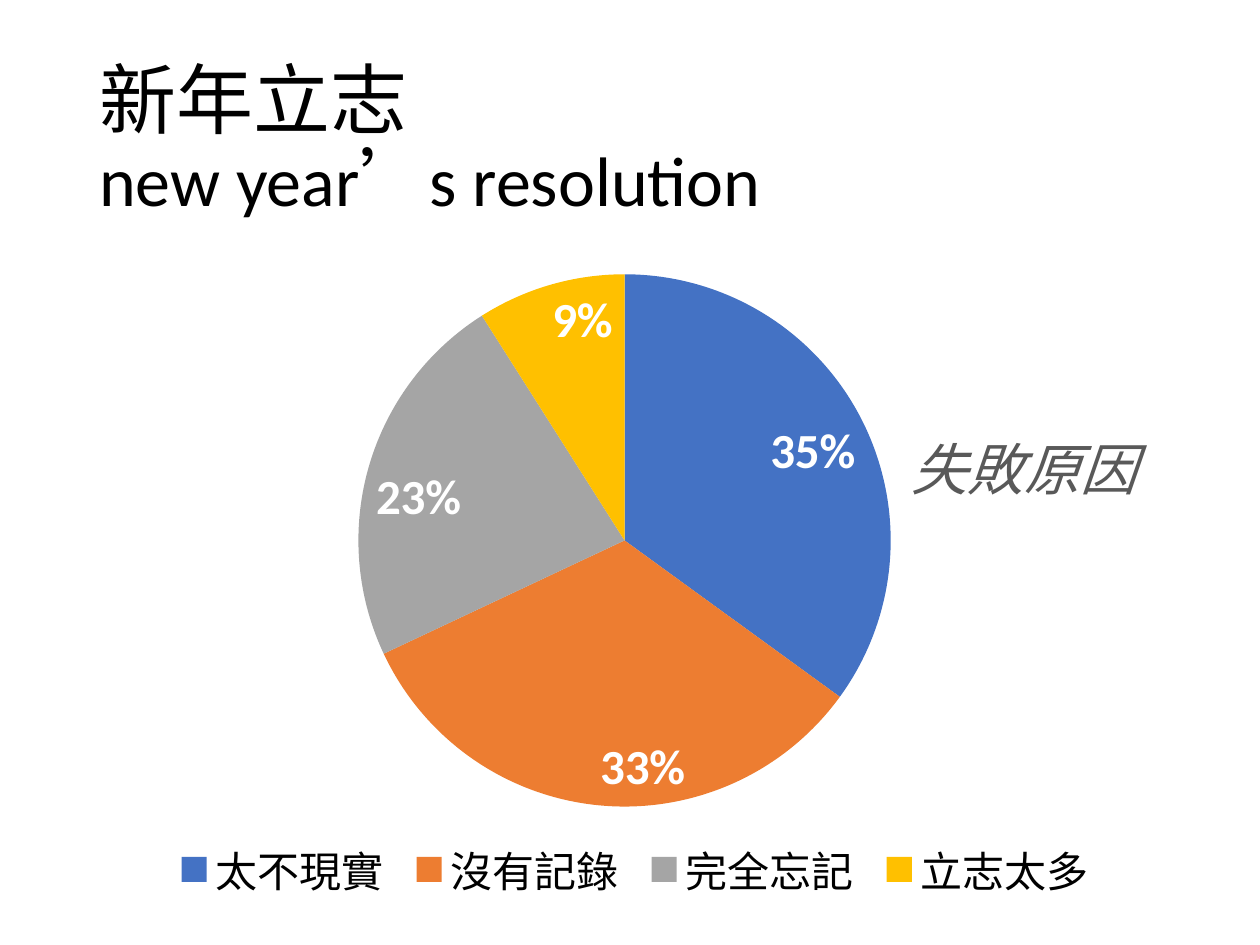
"""Build a slide with a pie chart of why New Year's resolutions fail."""
from typing import NamedTuple

from lxml.etree import SubElement
from pptx import Presentation
from pptx.chart.data import CategoryChartData
from pptx.dml.color import RGBColor
from pptx.enum.chart import XL_CHART_TYPE, XL_LABEL_POSITION, XL_LEGEND_POSITION
from pptx.enum.text import MSO_ANCHOR
from pptx.oxml import parse_xml
from pptx.oxml.ns import nsdecls, qn
from pptx.util import Cm, Pt

LATIN = "Calibri"
CJK = "Noto Sans CJK SC"


class Slice(NamedTuple):
    label: str
    percent: int
    color: str


class TextPiece(NamedTuple):
    text: str
    size: int
    font: str


SLICES = [
    Slice("太不現實", 35, "4472C4"),
    Slice("沒有記錄", 33, "ED7D31"),
    Slice("完全忘記", 23, "A5A5A5"),
    Slice("立志太多", 9, "FFC000"),
]
HEADING = [
    [TextPiece("新年立志", 44, CJK)],
    [
        TextPiece("new year", 40, LATIN),
        TextPiece("’", 40, CJK),
        TextPiece("s resolution", 40, LATIN),
    ],
]


def rgb(color: str) -> RGBColor:
    return RGBColor.from_string(color)


def style_font(font, size: int, color: str, name: str = LATIN) -> None:
    font.size = Pt(size)
    font.name = name
    font.color.rgb = rgb(color)
    SubElement(font._rPr, qn("a:ea")).set("typeface", CJK)


def set_layout(element, x: float, y: float, w: float = 0, h: float = 0,
               inner: bool = False) -> None:
    target = '<c:layoutTarget val="inner"/>' if inner else ""
    modes = '<c:xMode val="edge"/><c:yMode val="edge"/>'
    sizes = f'<c:w val="{w}"/><c:h val="{h}"/>' if w else ""
    layout = parse_xml(
        f'<c:layout {nsdecls("c")}><c:manualLayout>{target}{modes}'
        f'<c:x val="{x}"/><c:y val="{y}"/>{sizes}</c:manualLayout></c:layout>'
    )
    for old in element.findall(qn("c:layout")):
        element.remove(old)
    before = {qn("c:tx"), qn("c:legendPos"), qn("c:legendEntry")}
    element.insert(sum(child.tag in before for child in element), layout)


def add_heading(s) -> None:
    tf = s.shapes.add_textbox(Cm(1.75), Cm(1.02), Cm(21.9), Cm(3.68)).text_frame
    tf.word_wrap = True
    tf.vertical_anchor = MSO_ANCHOR.MIDDLE
    p = tf.paragraphs[0]
    p.line_spacing = 0.9
    for i, line in enumerate(HEADING):
        if i:
            p.add_line_break()
        for piece in line:
            r = p.add_run()
            r.text = piece.text
            style_font(r.font, piece.size, "000000", piece.font)


def add_pie(s) -> None:
    data = CategoryChartData(number_format="General")
    data.categories = [item.label for item in SLICES]
    data.add_series("Series 1", [item.percent for item in SLICES])
    chart = s.shapes.add_chart(
        XL_CHART_TYPE.PIE, Cm(1.75), Cm(3.81), Cm(21.9), Cm(15.24), data
    ).chart
    style_font(chart.font, 10, "000000")

    chart.has_title = True
    title = chart.chart_title
    title.include_in_layout = False
    p = title.text_frame.paragraphs[0]
    p.text = "失敗原因"
    style_font(p.font, 32, "595959")
    p.font.bold = False
    p.font.italic = True
    set_layout(title._element, 0.75, 0.29)

    chart.has_legend = True
    legend = chart.legend
    legend.position = XL_LEGEND_POSITION.TOP
    legend.include_in_layout = False
    style_font(legend.font, 24, "000000")
    set_layout(legend._element, 0.07, 0.85, 0.87, 0.1)

    plot = chart.plots[0]
    plot.vary_by_categories = True
    set_layout(chart._chartSpace.chart.plotArea, 0.25, 0.11, 0.49, 0.71, inner=True)
    series = plot.series[0]
    for i, item in enumerate(SLICES):
        fill = series.points[i].format.fill
        fill.solid()
        fill.fore_color.rgb = rgb(item.color)

    labels = series.data_labels
    labels.show_percentage = True
    labels.show_value = False
    labels.number_format = "0%"
    labels.number_format_is_linked = False
    labels.position = XL_LABEL_POSITION.INSIDE_END
    style_font(labels.font, 28, "FFFFFF")
    labels.font.bold = True


def main() -> None:
    prs = Presentation()
    prs.slide_width, prs.slide_height = Cm(25.4), Cm(19.05)
    s = prs.slides.add_slide(prs.slide_layouts[6])
    add_heading(s)
    add_pie(s)
    prs.save("out.pptx")


if __name__ == "__main__":
    main()
